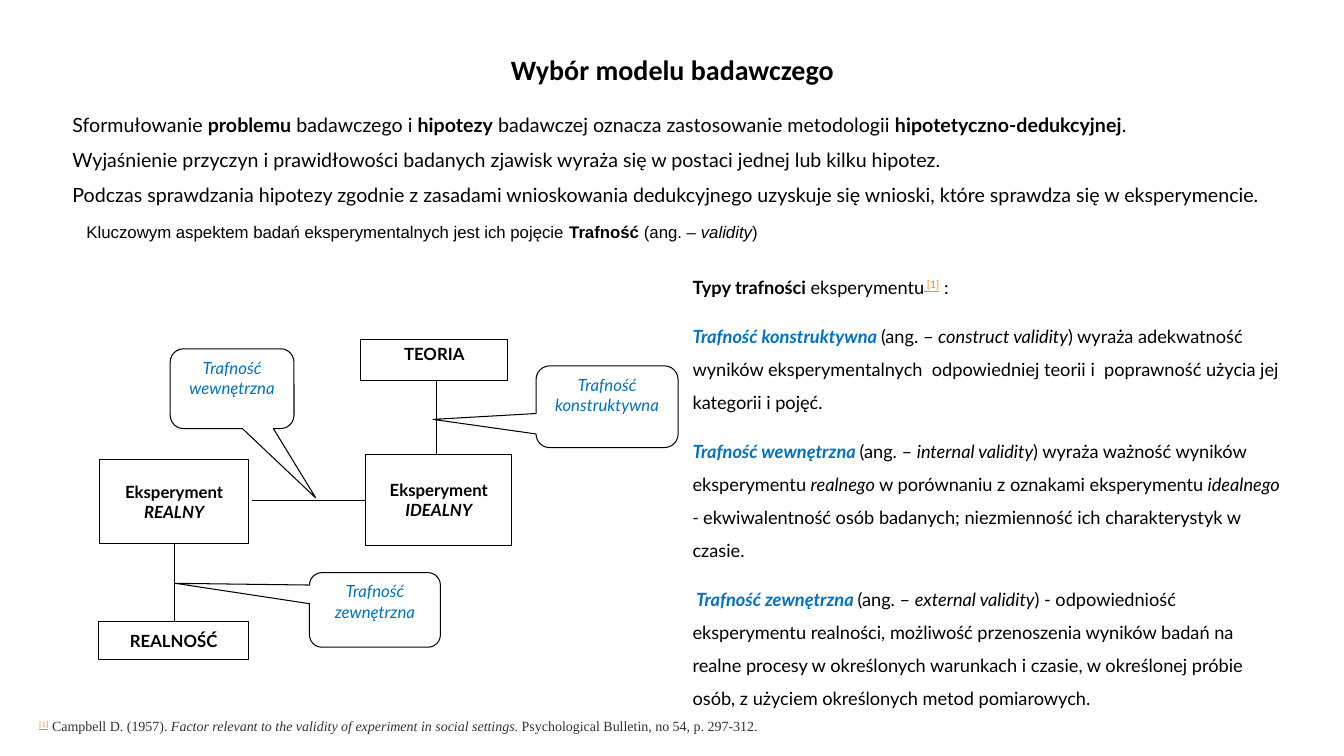
import pptx
import pptx.dml.color
import pptx.enum.shapes
import pptx.enum.text
import pptx.util
import lxml.etree

Cm, Pt = pptx.util.Cm, pptx.util.Pt
RGBColor = pptx.dml.color.RGBColor
ANCHOR = pptx.enum.text.MSO_ANCHOR
ALIGN = pptx.enum.text.PP_ALIGN
SHAPE = pptx.enum.shapes.MSO_SHAPE

BLACK = RGBColor(0x00, 0x00, 0x00)
WHITE = RGBColor(0xFF, 0xFF, 0xFF)
BLUE = RGBColor(0x00, 0x70, 0xC0)
ORANGE = RGBColor(0xF4, 0x91, 0x00)
GREY = RGBColor(0x33, 0x33, 0x33)

# Content: a paragraph is a list of (text, style) runs.
# Styles: b bold, i italic, c blue, g grey, r footnote reference
TITLE = [[("Wybór modelu badawczego", "b")]]
INTRO = [
    [("Sformułowanie ", ""), ("problemu", "b"), (" badawczego i ", ""), ("hipotezy", "b"),
     (" badawczej oznacza zastosowanie metodologii ", ""),
     ("hipotetyczno-dedukcyjnej", "b"), (".", "")],
    [("Wyjaśnienie przyczyn i prawidłowości badanych zjawisk wyraża się w postaci "
      "jednej lub kilku hipotez.", "")],
    [("Podczas sprawdzania hipotezy zgodnie z zasadami wnioskowania dedukcyjnego "
      "uzyskuje się wnioski, które sprawdza się w eksperymencie.", "")],
]
KEY_ASPECT = [[("Kluczowym aspektem badań eksperymentalnych jest ich pojęcie ", ""),
               ("Trafność ", "b"), ("(ang. – ", ""), ("validity", "i"), (")", "")]]
VALIDITY_TYPES = [
    [("Typy trafności", "b"), (" eksperymentu", ""), (" [1]", "r"), (" :", "")],
    [("Trafność konstruktywna ", "bic"), ("(ang. – ", ""), ("construct validity", "i"),
     (") wyraża adekwatność wyników eksperymentalnych  odpowiedniej teorii i  "
      "poprawność użycia jej kategorii i pojęć.", "")],
    [("Trafność wewnętrzna ", "bic"), ("(ang. – ", ""), ("internal validity", "i"),
     (") wyraża ważność wyników eksperymentu ", ""), ("realnego ", "i"),
     ("w porównaniu z oznakami eksperymentu ", ""), ("idealnego - ", "i"),
     ("ekwiwalentność osób badanych; niezmienność ich charakterystyk w czasie.", "")],
    [(" Trafność zewnętrzna ", "bic"), ("(ang. – ", ""), ("external validity", "i"),
     (") - odpowiedniość eksperymentu realności, możliwość przenoszenia wyników badań na "
      "realne procesy w określonych warunkach i czasie, w określonej próbie osób, "
      "z użyciem określonych metod pomiarowych.", "")],
]
FOOTNOTE = [[("[1]", "r"), (" ", ""), ("Campbell D. (1957).", "g"),
             (" Factor relevant to the validity of experiment in social settings", "ig"),
             (". Psychological Bulletin, no 54, p. 297-312.", "g")]]

# Diagram, in centimetres: (left, top, width, height)
LINKS = [(6.35, 12.6, 9.22, 12.6), (11, 9.6, 11, 11.5), (4.39, 13.69, 4.39, 15.67)]
BOXES = [
    ((9.09, 8.56, 3.71, 1.02), [[("TEORIA", "b")]], ANCHOR.TOP),
    ((9.22, 11.46, 3.68, 2.29), [[("Eksperyment", "b")], [("IDEALNY", "bi")]], ANCHOR.MIDDLE),
    ((2.49, 15.67, 3.78, 0.94), [[("REALNOŚĆ", "b")]], ANCHOR.MIDDLE),
    ((2.51, 11.58, 3.76, 2.11), [[("Eksperyment", "b")], [("REALNY", "bi")]], ANCHOR.MIDDLE),
]
# Each callout also gives the point its tip touches
CALLOUTS = [
    ((7.8, 14.43, 3.3, 1.88), "Trafność zewnętrzna", (4.42, 14.7)),
    ((4.29, 8.79, 3.12, 2.01), "Trafność wewnętrzna", (7.96, 12.55)),
    ((13.51, 9.22, 3.58, 2.06), "Trafność konstruktywna", (10.91, 10.57)),
]


def write(shape, paragraphs, size, font_name="Lato", align=ALIGN.LEFT, anchor=ANCHOR.TOP,
          line_spacing=1.0, gap=0):
    frame = shape.text_frame
    frame.word_wrap = True
    frame.auto_size = pptx.enum.text.MSO_AUTO_SIZE.NONE
    frame.vertical_anchor = anchor
    for index, runs in enumerate(paragraphs):
        paragraph = frame.add_paragraph() if index else frame.paragraphs[0]
        paragraph.alignment = align
        paragraph.line_spacing = line_spacing
        paragraph.space_before = Pt(gap if index else 0)
        for text, style in runs:
            run = paragraph.add_run()
            run.text = text
            font = run.font
            font.name, font.size = font_name, Pt(size)
            font.bold, font.italic = "b" in style, "i" in style
            font.color.rgb = BLUE if "c" in style else GREY if "g" in style else BLACK
            if "r" in style:
                font.color.rgb = ORANGE
                font.underline = True
                run._r.get_or_add_rPr().set("baseline", "30000")


def place(shape, area):
    shape.left, shape.top, shape.width, shape.height = map(Cm, area)
    return shape


def remove_bullets(shape):
    for paragraph in shape.text_frame.paragraphs:
        properties = paragraph._p.get_or_add_pPr()
        properties.set("marL", "0")
        properties.set("indent", "0")
        lxml.etree.SubElement(properties, pptx.oxml.ns.qn("a:buNone"))


def outlined(slide, kind, area):
    shape = slide.shapes.add_shape(kind, *map(Cm, area))
    shape.shadow.inherit = False
    shape.fill.solid()
    shape.fill.fore_color.rgb = WHITE
    shape.line.color.rgb = BLACK
    shape.line.width = Pt(0.75)
    return shape


def main():
    presentation = pptx.Presentation()
    presentation.slide_width, presentation.slide_height = Cm(33.87), Cm(19.05)
    slide = presentation.slides.add_slide(presentation.slide_layouts[3])
    title, intro, types = slide.placeholders

    # Title and the two bodies
    write(place(title, (2.34, 1.02, 29.21, 1.57)), TITLE, 20, "Calibri",
          ALIGN.CENTER, ANCHOR.MIDDLE, 0.9)
    write(place(intro, (1.57, 2.41, 30.76, 2.87)), INTRO, 14, line_spacing=1.5)
    write(place(types, (17.2, 6.55, 15.32, 12.5)), VALIDITY_TYPES, 13,
          line_spacing=1.5, gap=12)
    remove_bullets(intro)
    remove_bullets(types)

    # Diagram links
    for link in LINKS:
        connector = slide.shapes.add_connector(
            pptx.enum.shapes.MSO_CONNECTOR.STRAIGHT, *map(Cm, link))
        connector.line.color.rgb = BLACK
        connector.line.width = Pt(0.75)
        lxml.etree.SubElement(connector._element.spPr, pptx.oxml.ns.qn("a:effectLst"))

    # Diagram boxes
    for area, label, anchor in BOXES:
        box = outlined(slide, SHAPE.RECTANGLE, area)
        frame = box.text_frame
        frame.margin_left = frame.margin_right = Cm(0.1)
        frame.margin_top = frame.margin_bottom = Cm(0.1)
        write(box, label, 12, align=ALIGN.CENTER, anchor=anchor)

    # Callouts: the tip is set relative to the centre, in shares of the size
    for area, label, (tip_x, tip_y) in CALLOUTS:
        left, top, width, height = area
        callout = outlined(slide, SHAPE.ROUNDED_RECTANGULAR_CALLOUT, area)
        callout.adjustments[0] = (tip_x - left) / width - 0.5
        callout.adjustments[1] = (tip_y - top) / height - 0.5
        write(callout, [[(label, "ic")]], 12, align=ALIGN.CENTER)

    # Key aspect and footnote
    key_aspect = slide.shapes.add_textbox(*map(Cm, (1.93, 5.46, 18.31, 0.76)))
    write(key_aspect, KEY_ASPECT, 12, "Arial", anchor=ANCHOR.MIDDLE)
    footnote = slide.shapes.add_textbox(*map(Cm, (0.74, 17.96, 24.38, 0.69)))
    write(footnote, FOOTNOTE, 10, "Times New Roman", anchor=ANCHOR.MIDDLE)

    presentation.save("out.pptx")


if __name__ == "__main__":
    main()
